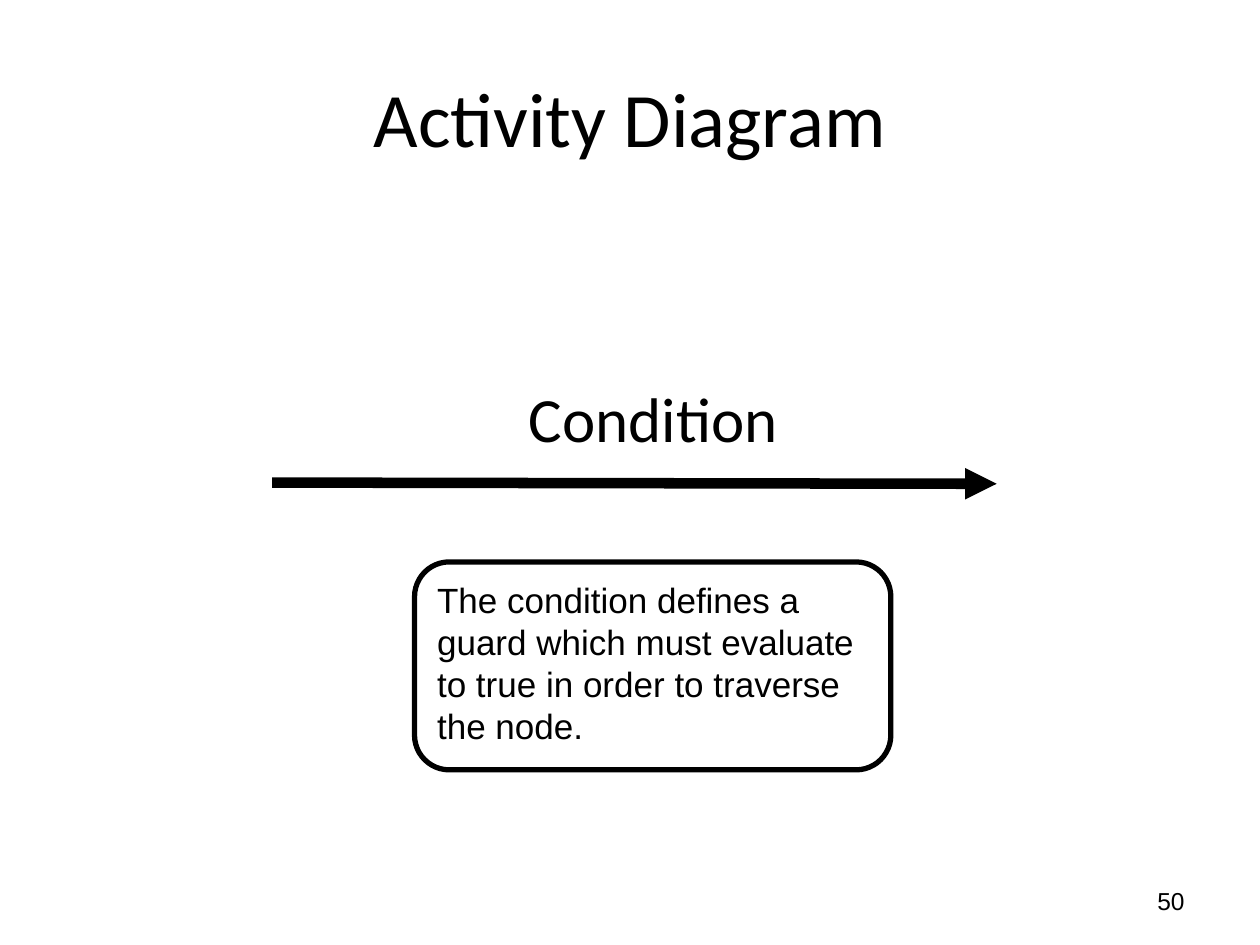
from lxml.etree import SubElement
from pptx import Presentation
from pptx.dml.color import RGBColor
from pptx.enum.shapes import MSO_CONNECTOR as Connector, MSO_SHAPE as Shape
from pptx.enum.text import MSO_ANCHOR as Anchor, PP_ALIGN as Align
from pptx.oxml.ns import qn
from pptx.util import Inches, Pt

WIDTH, HEIGHT = 10, 7.5
COLORS = {"ink": "000000", "paper": "FFFFFF"}
FORMATS = {
    "title": {"name": "Calibri", "size": Pt(44)},
    "label": {"name": "Calibri", "size": Pt(36)},
    "note": {"name": "Arial", "size": Pt(20)},
    "number": {"name": "Arial", "size": Pt(14)},
}


def color(name):
    return RGBColor.from_string(COLORS[name])


def write(s, text, style, align, anchor, wrap=True):
    tf = s.text_frame
    tf.word_wrap = wrap
    tf.vertical_anchor = anchor
    p = tf.paragraphs[0]
    p.alignment = align
    r = p.add_run()
    r.text = text
    for key, value in FORMATS[style].items():
        setattr(r.font, key, value)
    r.font.color.rgb = color("ink")


def add_title(slide, text):
    s = slide.shapes.title
    box = (0.05 * WIDTH, 0.04 * HEIGHT, 0.9 * WIDTH, HEIGHT / 6)
    s.left, s.top, s.width, s.height = map(Inches, box)
    write(s, text, "title", Align.CENTER, Anchor.MIDDLE)


def add_text(slide, box, *content, **options):
    s = slide.shapes.add_textbox(*map(Inches, box))
    write(s, *content, **options)


def add_arrow(slide, start, end, weight):
    s = slide.shapes.add_connector(
        Connector.STRAIGHT, *map(Inches, start + end))
    s.line.color.rgb = color("ink")
    s.line.width = Pt(weight)
    SubElement(s.line._get_or_add_ln(), qn("a:tailEnd"), type="triangle")
    SubElement(s._element.spPr, qn("a:effectLst"))


def add_note(slide, box, text):
    s = slide.shapes.add_shape(Shape.ROUNDED_RECTANGLE, *map(Inches, box))
    s.shadow.inherit = False
    s.fill.background()
    s.line.color.rgb = color("ink")
    s.line.width = Pt(3)
    write(s, text, "note", Align.LEFT, Anchor.TOP)


def main():
    prs = Presentation()
    prs.slide_width, prs.slide_height = Inches(WIDTH), Inches(HEIGHT)
    slide = prs.slides.add_slide(prs.slide_layouts[5])
    fill = slide.background.fill
    fill.solid()
    fill.fore_color.rgb = color("paper")

    add_text(slide, (7.17, 6.95, 2.33, 0.4), "50", "number",
             Align.RIGHT, Anchor.MIDDLE)
    add_title(slide, "Activity Diagram")
    add_text(slide, (4.02, 2.96, 2.33, 0.71), "Condition", "label",
             Align.CENTER, Anchor.TOP, wrap=False)
    add_arrow(slide, (2.16, 3.83), (7.91, 3.84), 6)
    add_note(slide, (3.29, 4.46, 3.78, 1.65),
             "The condition defines a guard which must evaluate to true "
             "in order to traverse the node.")
    prs.save("out.pptx")


if __name__ == "__main__":
    main()
